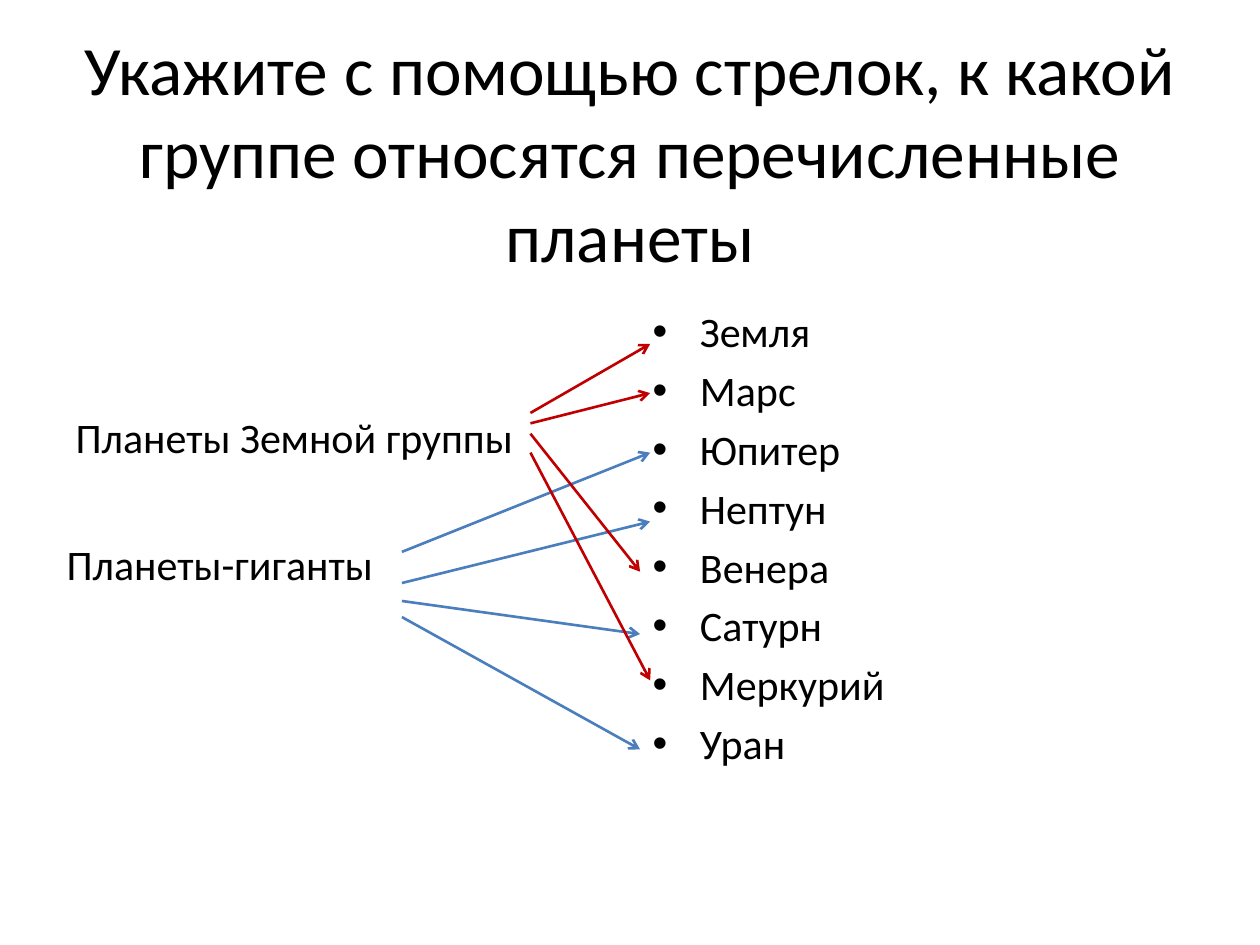
from pptx import Presentation
from pptx import util as u
from pptx.dml.color import RGBColor
from pptx.enum import shapes, text
from pptx.oxml.ns import qn
from lxml import etree

BLACK = RGBColor(0, 0, 0)
RED = RGBColor(0xC0, 0, 0)
BLUE = RGBColor(0x4B, 0x7E, 0xBC)

prs = Presentation()
prs.slide_width, prs.slide_height = u.Inches(10), u.Inches(7.5)
COL, ROW = prs.slide_width / 100, prs.slide_height / 100
s = prs.slides.add_slide(prs.slide_layouts[3])
title, terrestrial, planets = s.placeholders


def place(sp, col, row, cols, rows):
    sp.left, sp.top = int(col * COL), int(row * ROW)
    sp.width, sp.height = int(cols * COL), int(rows * ROW)
    tf = sp.text_frame
    tf.word_wrap = True
    tf.auto_size = text.MSO_AUTO_SIZE.NONE
    return tf


def write(p, words, size):
    r = p.add_run()
    r.text = words
    r.font.name = "Calibri"
    r.font.size = u.Pt(size)
    r.font.color.rgb = BLACK


tf = place(title, 5, 4, 90, 24)
tf.vertical_anchor = text.MSO_ANCHOR.MIDDLE
p = tf.paragraphs[0]
p.alignment = text.PP_ALIGN.CENTER
write(p, "Укажите с помощью стрелок, к какой группе относятся перечисленные планеты", 39.6)

tf = place(terrestrial, 5, 39.5, 44.2, 10)
tf.margin_top = u.Inches(0.3)
p = tf.paragraphs[0]
pPr = p._p.get_or_add_pPr()
pPr.set("marL", "0")
pPr.set("indent", "0")
etree.SubElement(pPr, qn("a:buNone"))
p.space_before = u.Pt(0)
write(p, "Планеты Земной группы", 24)

tf = place(planets, 50.8, 31.7, 44.2, 57.6)
names = ["Земля", "Марс", "Юпитер", "Нептун", "Венера", "Сатурн", "Меркурий", "Уран"]
for i, name in enumerate(names):
    p = tf.add_paragraph() if i else tf.paragraphs[0]
    if i == 0:
        p.space_before = u.Pt(0)
    write(p, name, 24)

giants = s.shapes.add_textbox(0, 0, 0, 0)
tf = place(giants, 4.3, 56.3, 26.6, 10.8)
write(tf.paragraphs[0], "Планеты-гиганты", 24)

START = {RED: 42.1, BLUE: 31.9}
NEAR, FAR = 50.8, 51.6
arrows = [
    (RED, 43.7, FAR, 36.4),
    (RED, 44.8, FAR, 41.6),
    (BLUE, 58.4, FAR, 47.9),
    (BLUE, 61.7, FAR, 55.2),
    (RED, 45.9, NEAR, 60.5),
    (BLUE, 63.6, NEAR, 67.1),
    (RED, 47.9, FAR, 72),
    (BLUE, 65.3, NEAR, 79.3),
]
for color, row, end_col, end_row in arrows:
    line = s.shapes.add_connector(
        shapes.MSO_CONNECTOR.STRAIGHT,
        int(START[color] * COL), int(row * ROW), int(end_col * COL), int(end_row * ROW))
    line.line.color.rgb = color
    line.line.width = u.Pt(1.5)
    etree.SubElement(line.line._get_or_add_ln(), qn("a:tailEnd"), type="arrow")
    etree.SubElement(line._element.spPr, qn("a:effectLst"))

prs.save("out.pptx")
